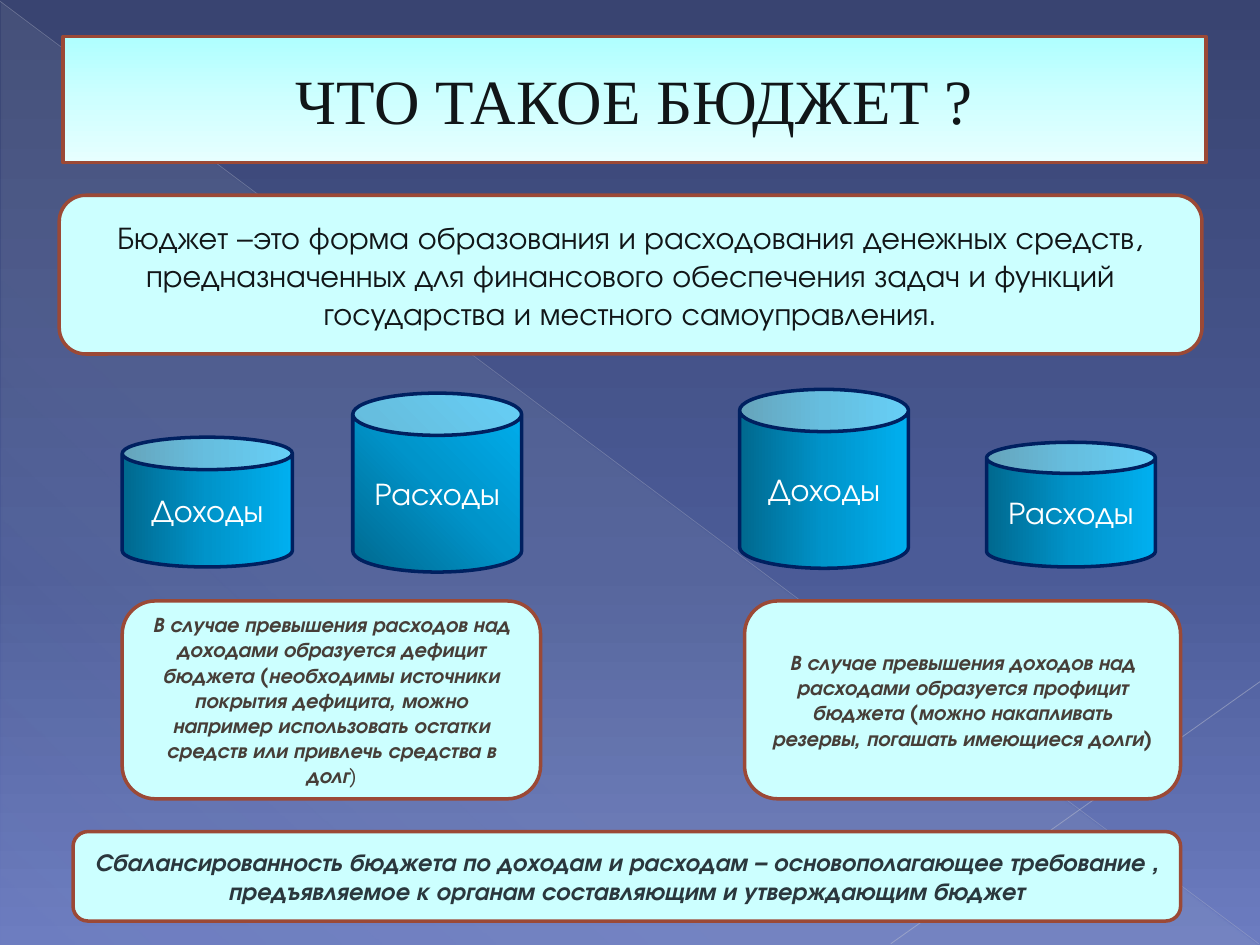
from lxml.etree import SubElement
from pptx import Presentation
from pptx.dml.color import RGBColor
from pptx.enum.shapes import MSO_CONNECTOR, MSO_SHAPE
from pptx.enum.text import MSO_ANCHOR, MSO_AUTO_SIZE, PP_ALIGN
from pptx.oxml.ns import qn
from pptx.util import Inches, Pt

BODY_FONT = "TeX Gyre Adventor"
THEME = {
    "background": [(0, "394471", 100), (60, "4B5B97", 100), (100, "6C7CC0", 100)],
    "corner": [(0, "C5D1D7", 10), (70, "C5D1D7", 8), (100, "C5D1D7", 1)],
    "header": [(0, "AFFFFF", 100), (50, "CEFFFF", 100), (100, "E7FFFF", 100)],
    "cylinder": [(0, "00688E", 100), (50, "0094CA", 100), (100, "00B0F0", 100)],
    "panel": "CCFFFF",
    "panel_line": "9B4936",
    "cylinder_line": "002060",
    "line_width": 2,
    "text": {
        "title": {"name": "Times New Roman", "size": Pt(36), "color": "111618", "bold": False, "italic": False},
        "definition": {"name": BODY_FONT, "size": Pt(18), "color": "111618", "bold": False, "italic": False},
        "label": {"name": BODY_FONT, "size": Pt(18), "color": "FFFFFF", "bold": False, "italic": False},
        "case": {"name": BODY_FONT, "size": Pt(12), "color": "463E38", "bold": True, "italic": True},
        "summary": {"name": BODY_FONT, "size": Pt(14), "color": "2A373D", "bold": True, "italic": True},
    },
}


def set_gradient(fill, properties, stops, angle):
    fill.solid()
    solid = properties.find(qn("a:solidFill"))
    gradient = solid.makeelement(qn("a:gradFill"), {"rotWithShape": "1"})
    stop_list = SubElement(gradient, qn("a:gsLst"))
    for position, color, opacity in stops:
        stop = SubElement(stop_list, qn("a:gs"), pos=str(position * 1000))
        rgb = SubElement(stop, qn("a:srgbClr"), val=color)
        if opacity < 100:
            SubElement(rgb, qn("a:alpha"), val=str(opacity * 1000))
    SubElement(gradient, qn("a:lin"), ang=str(angle * 60000), scaled="0")
    properties.replace(solid, gradient)


def write_text(shape, runs, style):
    frame = shape.text_frame
    frame_format = {"word_wrap": True, "auto_size": MSO_AUTO_SIZE.NONE, "vertical_anchor": MSO_ANCHOR.MIDDLE}
    for name, value in frame_format.items():
        setattr(frame, name, value)
    paragraph = frame.paragraphs[0]
    paragraph.alignment = PP_ALIGN.CENTER
    for text, changes in runs:
        run = paragraph.add_run()
        run.text = text
        for name, value in {**THEME["text"][style], **changes}.items():
            if name == "color":
                run.font.color.rgb = RGBColor.from_string(value)
            else:
                setattr(run.font, name, value)


presentation = Presentation()
presentation.slide_width, presentation.slide_height = Inches(10), Inches(7.5)
column = presentation.slide_width / 100
row = presentation.slide_height / 75
slide = presentation.slides.add_slide(presentation.slide_layouts[5])
title = slide.shapes.title

background_fill = slide.background.fill
background_fill.solid()
background_properties = slide.element.find(".//" + qn("p:bgPr"))
set_gradient(background_fill, background_properties, THEME["background"], 90)

corner = slide.shapes.add_shape(
    MSO_SHAPE.RIGHT_TRIANGLE, int(0.1 * column), int(0.2 * row), int(99.8 * column), int(74.8 * row)
)
corner.shadow.inherit = False
set_gradient(corner.fill, corner.element.spPr, THEME["corner"], 133)
corner.line.fill.background()

diagonals = [
    (0, 0.1, 99.9, 74.9, "BABECD", 0.39, 35),
    (100, 54.1, 70.7, 74.9, "C2C5D2", 0.47, 45),
]
for start_x, start_y, end_x, end_y, color, width, opacity in diagonals:
    diagonal = slide.shapes.add_connector(
        MSO_CONNECTOR.STRAIGHT,
        int(start_x * column), int(start_y * row), int(end_x * column), int(end_y * row),
    )
    diagonal.line.color.rgb = RGBColor.from_string(color)
    diagonal.line.width = Pt(width)
    SubElement(diagonal.element.find(".//" + qn("a:srgbClr")), qn("a:alpha"), val=str(opacity * 1000))
    SubElement(diagonal.element.spPr, qn("a:effectLst"))

tree = title.element.getparent()
tree.remove(title.element)
tree.append(title.element)
title_box = {"left": 5 * column, "top": 2.9 * row, "width": 90.7 * column, "height": 10 * row}
for name, value in title_box.items():
    setattr(title, name, int(value))
geometry = SubElement(title.element.spPr, qn("a:prstGeom"), prst="roundRect")
SubElement(geometry, qn("a:avLst"))
set_gradient(title.fill, title.element.spPr, THEME["header"], 90)
title.line.color.rgb = RGBColor.from_string(THEME["panel_line"])
title.line.width = Pt(THEME["line_width"])
write_text(title, [("ЧТО ТАКОЕ БЮДЖЕТ ?", {})], "title")

panels = [
    (4.7, 15.5, 90.7, 12.6, "definition", [(
        "Бюджет –это форма образования и расходования денежных средств, предназначенных для "
        "финансового обеспечения задач и функций государства и местного самоуправления.", {})]),
    (9.7, 47.7, 33.2, 15.7, "case", [(
        "В случае превышения расходов над доходами образуется дефицит бюджета (необходимы "
        "источники покрытия дефицита, можно например использовать остатки средств или "
        "привлечь средства в долг", {}), (")", {"bold": False})]),
    (59.1, 47.7, 34.6, 15.7, "case", [(
        "В случае превышения доходов над расходами образуется профицит бюджета (можно "
        "накапливать резервы, погашать имеющиеся долги)", {})]),
    (5.8, 66, 87.9, 7.1, "summary", [(
        "Сбалансированность бюджета по доходам и расходам – основополагающее требование , "
        "предъявляемое к органам составляющим и утверждающим бюджет", {})]),
]
for left, top, width, height, style, runs in panels:
    panel = slide.shapes.add_shape(
        MSO_SHAPE.ROUNDED_RECTANGLE, int(left * column), int(top * row), int(width * column), int(height * row)
    )
    panel.shadow.inherit = False
    panel.fill.solid()
    panel.fill.fore_color.rgb = RGBColor.from_string(THEME["panel"])
    panel.line.color.rgb = RGBColor.from_string(THEME["panel_line"])
    panel.line.width = Pt(THEME["line_width"])
    write_text(panel, runs, style)

cylinders = [
    (9.7, 34.7, 13.5, 10.3, 0, "Доходы"),
    (28, 31.2, 13.4, 14.2, 315, "Расходы"),
    (58.7, 30.9, 13.4, 14.2, 0, "Доходы"),
    (78.3, 35.1, 13.4, 9.9, 0, "Расходы"),
]
for left, top, width, height, angle, label in cylinders:
    cylinder = slide.shapes.add_shape(
        MSO_SHAPE.CAN, int(left * column), int(top * row), int(width * column), int(height * row)
    )
    cylinder.shadow.inherit = False
    set_gradient(cylinder.fill, cylinder.element.spPr, THEME["cylinder"], angle)
    cylinder.line.color.rgb = RGBColor.from_string(THEME["cylinder_line"])
    cylinder.line.width = Pt(THEME["line_width"])
    write_text(cylinder, [(label, {})], "label")

presentation.save("out.pptx")
